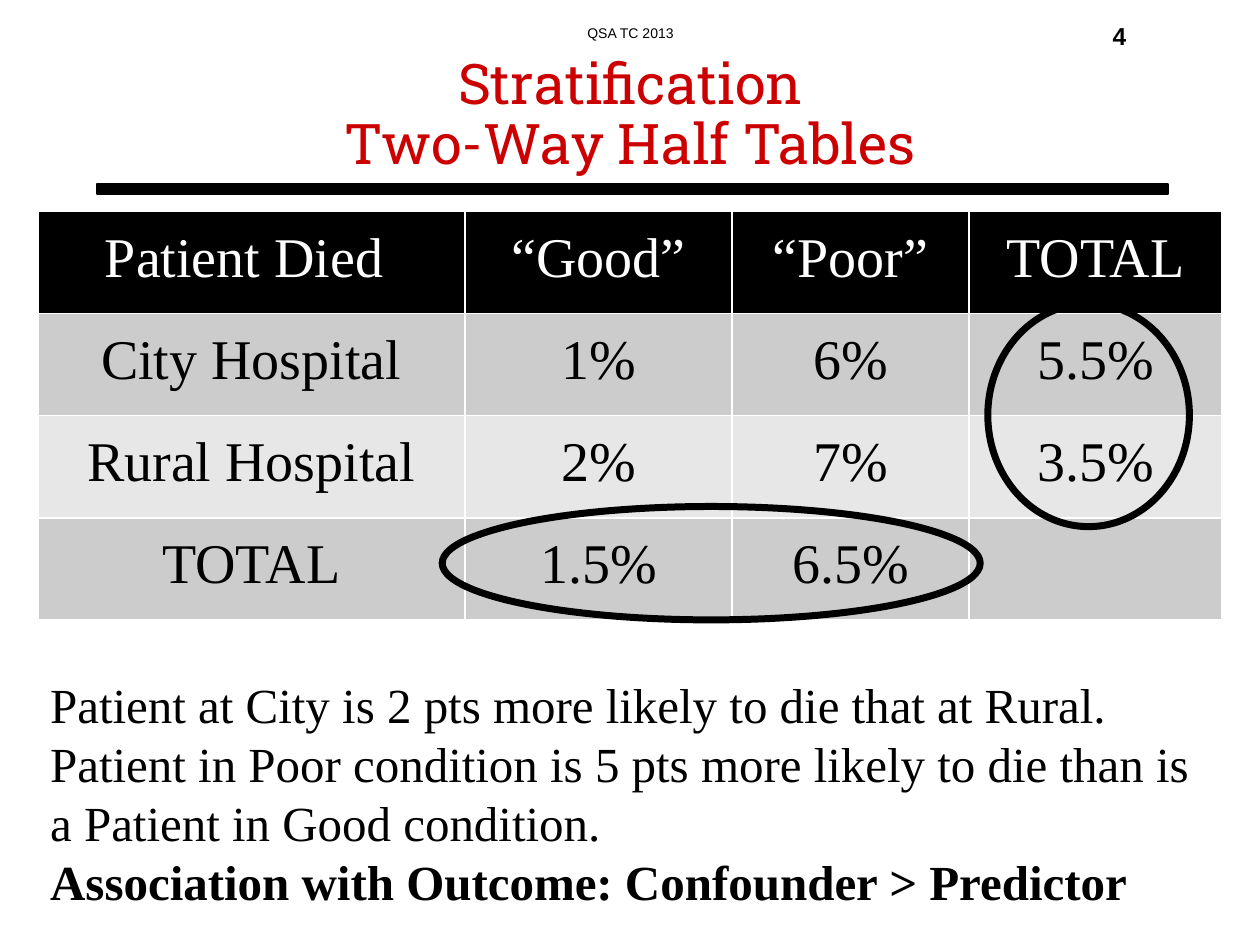
from lxml import etree
from pptx import Presentation
from pptx.dml.color import RGBColor
from pptx.enum.shapes import MSO_SHAPE
from pptx.enum.text import MSO_ANCHOR, MSO_AUTO_SIZE, PP_ALIGN
from pptx.oxml.ns import qn
from pptx.util import Inches, Pt

CENTER, LEFT = PP_ALIGN.CENTER, PP_ALIGN.LEFT
MIDDLE, TOP = MSO_ANCHOR.MIDDLE, MSO_ANCHOR.TOP
NO_AUTOFIT = MSO_AUTO_SIZE.NONE
RECT, OVAL = MSO_SHAPE.RECTANGLE, MSO_SHAPE.OVAL

COLORS = {"black": "000000", "white": "FFFFFF", "red": "CC0000",
          "dark_band": "CCCCCC", "light_band": "E7E7E7"}
SERIF, SANS, SLAB = "Times New Roman", "Arial", "Roboto Slab"

TITLE = "Stratification\vTwo-Way Half Tables"
FOOTER = "QSA TC 2013"
PAGE = "4"
ROWS = [
    ("Patient Died ", "“Good”", "“Poor”", "TOTAL"),
    ("City Hospital", "1%", "6%", "5.5%"),
    ("Rural Hospital", "2%", "7%", "3.5%"),
    ("TOTAL", "1.5%", "6.5%", ""),
]
COL_WIDTHS = [3.39, 2.12, 1.88, 2.01]
ROW_HEIGHT = 0.81
ROW_FILLS = ["black", "dark_band", "light_band", "dark_band"]
NOTES = [
    ("Patient at City is 2 pts more likely to die that at Rural.", False),
    ("Patient in Poor condition is 5 pts more likely to die than is "
     "a Patient in Good condition.", False),
    ("Association with Outcome: Confounder > Predictor", True),
]
RINGS = [(7.84, 2.41, 1.6, 1.77), (3.51, 4.02, 4.27, 0.9)]


def rgb(name):
    return RGBColor.from_string(COLORS[name])


def format_paragraph(p, size, font, color="black", bold=False, align=CENTER, spacing=None):
    p.alignment = align
    p.line_spacing = spacing
    for r in p.runs:
        r.font.size = Pt(size)
        r.font.name = font
        r.font.bold = bold
        r.font.color.rgb = rgb(color)


def add_text(s, box, lines, size, font, **style):
    tf = s.shapes.add_textbox(*map(Inches, box)).text_frame
    tf.word_wrap = True
    tf.vertical_anchor = TOP
    for i, (text, bold) in enumerate(lines):
        p = tf.add_paragraph() if i else tf.paragraphs[0]
        p.text = text
        format_paragraph(p, size, font, bold=bold, **style)


def add_outline(s, kind, box, width, fill=None):
    sp = s.shapes.add_shape(kind, *map(Inches, box))
    sp.shadow.inherit = False
    if fill:
        sp.fill.solid()
        sp.fill.fore_color.rgb = rgb(fill)
    else:
        sp.fill.background()
    sp.line.color.rgb = rgb("black")
    sp.line.width = Pt(width)


def add_borders(cell):
    tc_pr = cell._tc.get_or_add_tcPr()
    for side in ("lnL", "lnR", "lnT", "lnB"):
        ln = etree.SubElement(tc_pr, qn(f"a:{side}"), w=str(Pt(1)))
        fill = etree.SubElement(ln, qn("a:solidFill"))
        etree.SubElement(fill, qn("a:srgbClr"), val=COLORS["white"])


def add_rates(s):
    table = s.shapes.add_table(
        len(ROWS), len(COL_WIDTHS), Inches(0.3), Inches(1.68),
        Inches(sum(COL_WIDTHS)), Inches(ROW_HEIGHT * len(ROWS))).table
    for col, width in zip(table.columns, COL_WIDTHS):
        col.width = Inches(width)
    for i, (values, fill) in enumerate(zip(ROWS, ROW_FILLS)):
        table.rows[i].height = Inches(ROW_HEIGHT)
        for j, value in enumerate(values):
            cell = table.cell(i, j)
            add_borders(cell)
            cell.fill.solid()
            cell.fill.fore_color.rgb = rgb(fill)
            cell.vertical_anchor = MIDDLE
            cell.text_frame.text = value
            format_paragraph(cell.text_frame.paragraphs[0], 32, SERIF,
                             "black" if i else "white", spacing=0.8)


def main():
    prs = Presentation()
    prs.slide_width, prs.slide_height = Inches(10), Inches(7.5)
    s = prs.slides.add_slide(prs.slide_layouts[5])

    add_outline(s, RECT, (0.77, 1.46, 8.5, 0.08), 0.75, "black")
    add_text(s, (4.17, 0.17, 1.67, 0.25), [(FOOTER, False)], 8, SANS, spacing=0.8)
    add_text(s, (8.55, 0.12, 0.67, 0.37), [(PAGE, True)], 14, SANS)

    title = s.shapes.title
    title.left, title.top, title.width, title.height = map(
        Inches, (0.77, 0.34, 8.47, 1.17))
    tf = title.text_frame
    tf.text = TITLE
    tf.auto_size = NO_AUTOFIT
    tf.vertical_anchor = MIDDLE
    format_paragraph(tf.paragraphs[0], 32, SLAB, "red", spacing=0.9)

    add_text(s, (0.3, 5.3, 9.4, 1.97), NOTES, 28, SERIF, align=LEFT, spacing=Pt(33.7))
    add_rates(s)
    for box in RINGS:
        add_outline(s, OVAL, box, 4)

    prs.save("out.pptx")


if __name__ == "__main__":
    main()
